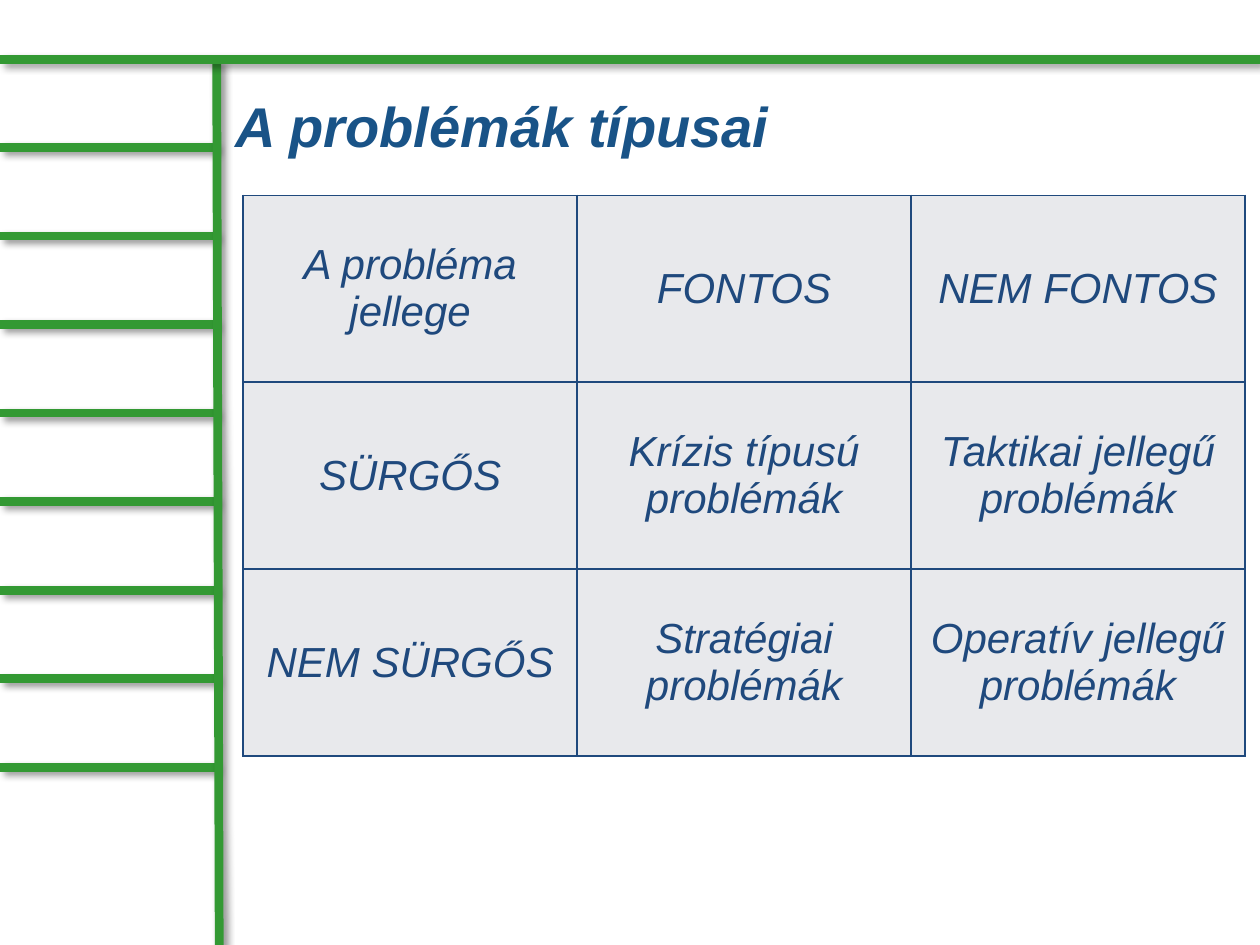
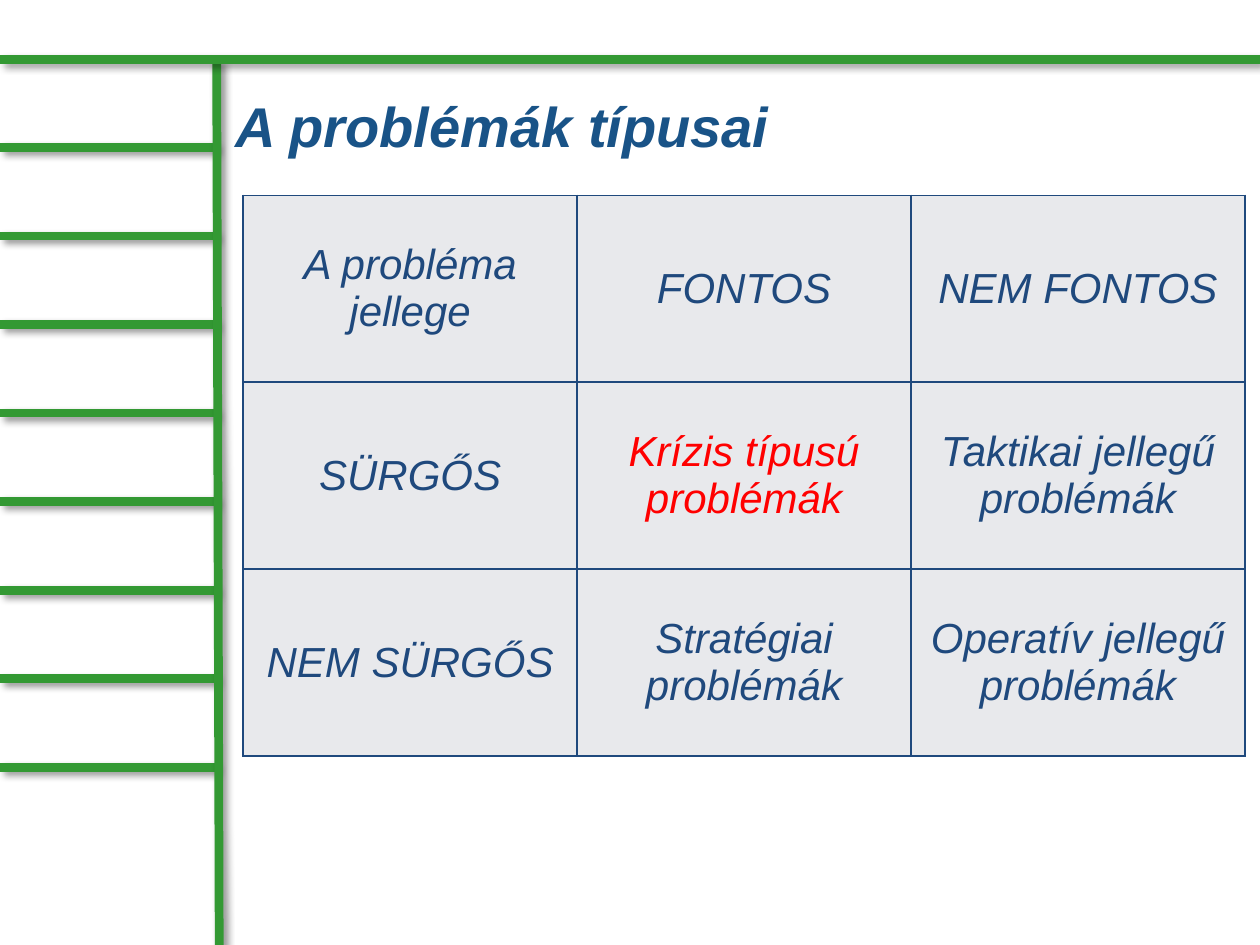
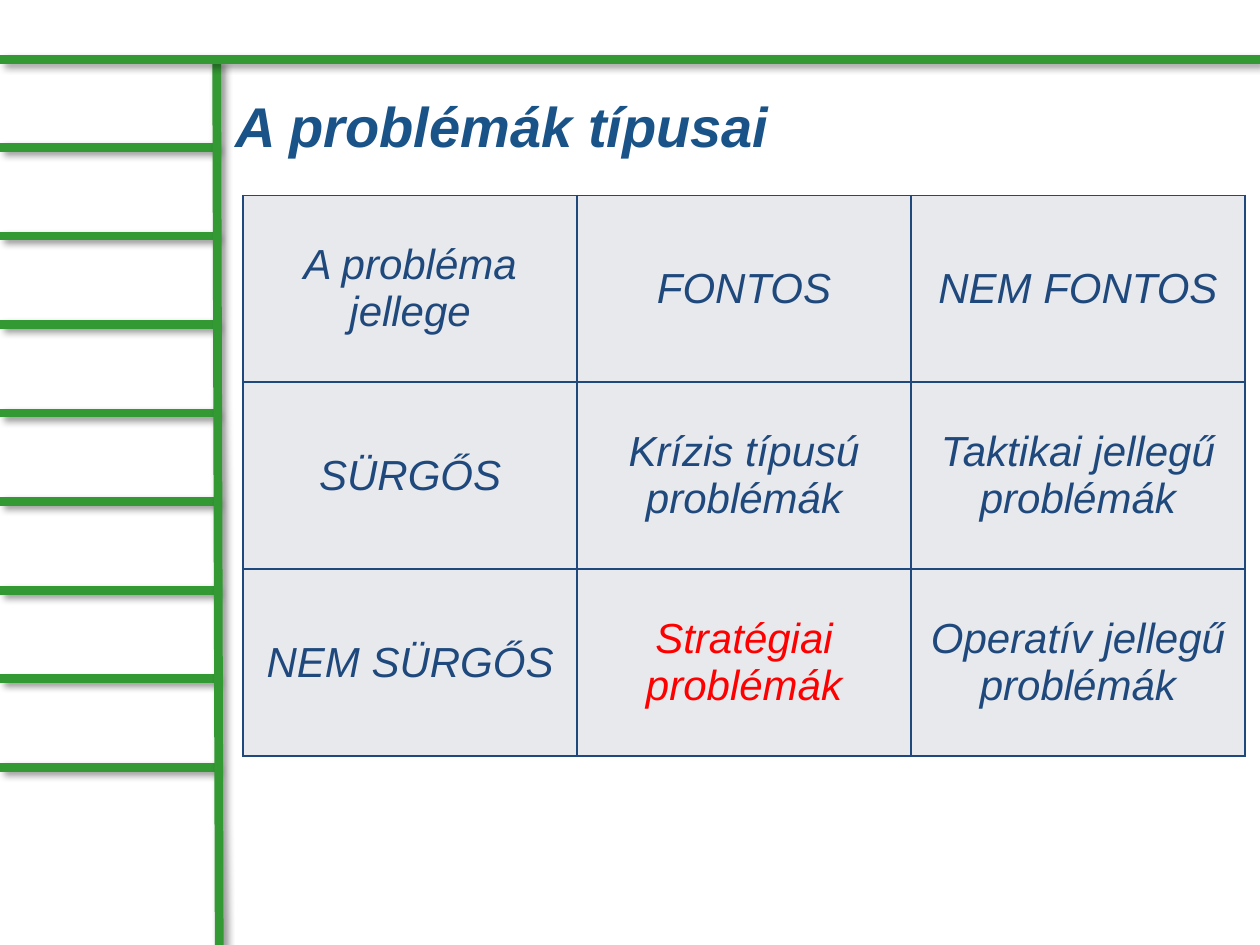
from lxml import etree
from pptx import Presentation
from pptx.dml.color import RGBColor
from pptx.enum.shapes import MSO_CONNECTOR as Connector
from pptx.enum.text import MSO_ANCHOR as Anchor, PP_ALIGN as Align
from pptx.oxml import parse_xml
from pptx.oxml.ns import nsdecls, qn
from pptx.util import Inches, Pt

# Content
TITLE = "A problémák típusai"
MATRIX = [
    ("A probléma jellege", "FONTOS", "NEM FONTOS"),
    ("SÜRGŐS", "Krízis típusú problémák", "Taktikai jellegű problémák"),
    ("NEM SÜRGŐS", "Stratégiai problémák", "Operatív jellegű problémák"),
]
HIGHLIGHTS = [None, "Krízis típusú problémák", "Stratégiai problémák"]

# Shared style
FONT = "Arial"
GREEN = RGBColor(0x33, 0x99, 0x33)
TITLE_BLUE = RGBColor(0x19, 0x53, 0x87)
TABLE_BLUE = RGBColor(0x1F, 0x49, 0x7D)
CELL_GREY = RGBColor(0xE8, 0xE9, 0xEC)
RED = RGBColor(0xFF, 0x00, 0x00)

# Geometry in inches
PAGE_WIDTH, PAGE_HEIGHT = 10, 7.5
TITLE_BOX = (1.77, 0.52, 7.95, 0.94)
TABLE_BOX = (1.93, 1.55, 7.95, 4.45)
BEAM_Y, POST_X = 0.47, 1.72
RUNG_COUNT, FIRST_RUNG, LAST_RUNG = 8, 1.17, 6.09


def shadow_effect(blur, distance, opacity):
    return parse_xml(
        f'<a:effectLst {nsdecls("a")}><a:outerShdw blurRad="{Pt(blur)}" '
        f'dist="{Pt(distance)}" dir="2700000" algn="tl" rotWithShape="0">'
        f'<a:srgbClr val="000000"><a:alpha val="{opacity * 1000}"/></a:srgbClr>'
        '</a:outerShdw></a:effectLst>')


def style_run(span, size, color):
    font = span.font
    font.name, font.size, font.italic = FONT, Pt(size), True
    font.color.rgb = color


def add_ladder(page, layout):
    """Draw the green ladder and move it to the layout that all slides share."""
    step = (LAST_RUNG - FIRST_RUNG) / (RUNG_COUNT - 1)
    rungs = [FIRST_RUNG + step * index for index in range(RUNG_COUNT)]
    bars = [(0, y, POST_X, y) for y in reversed(rungs)]
    bars += [(POST_X, 0.48, POST_X + 0.02, PAGE_HEIGHT),
             (0, BEAM_Y, PAGE_WIDTH, BEAM_Y)]
    for ends in bars:
        bar = page.shapes.add_connector(Connector.STRAIGHT, *map(Inches, ends))
        bar.line.color.rgb = GREEN
        bar.line.width = Pt(5)
        bar.element.spPr.append(shadow_effect(4, 3, 40))
        layout.shapes.element.append(bar.element)


def add_title(page):
    box = page.shapes.title
    box.left, box.top, box.width, box.height = map(Inches, TITLE_BOX)
    frame = box.text_frame
    frame.word_wrap = True
    frame.vertical_anchor = Anchor.MIDDLE
    para = frame.paragraphs[0]
    para.alignment = Align.LEFT
    span = para.add_run()
    span.text = TITLE
    style_run(span, 32, TITLE_BLUE)
    span.font.bold = True
    fill = span.font.fill._xPr.find(qn("a:solidFill"))
    fill.addnext(shadow_effect(3, 3, 40))


def add_borders(cell):
    properties = cell._tc.get_or_add_tcPr()
    for index, side in enumerate(("lnL", "lnR", "lnT", "lnB")):
        line = etree.Element(qn(f"a:{side}"), w=str(Pt(1)))
        fill = etree.SubElement(line, qn("a:solidFill"))
        etree.SubElement(fill, qn("a:srgbClr"), val=str(TABLE_BLUE))
        properties.insert(index, line)


def add_matrix(page, highlight):
    table = page.shapes.add_table(
        len(MATRIX), len(MATRIX[0]), *map(Inches, TABLE_BOX)).table
    table.first_row = table.horz_banding = False
    for row, labels in enumerate(MATRIX):
        for column, label in enumerate(labels):
            cell = table.cell(row, column)
            cell.fill.solid()
            cell.fill.fore_color.rgb = CELL_GREY
            cell.vertical_anchor = Anchor.MIDDLE
            add_borders(cell)
            para = cell.text_frame.paragraphs[0]
            para.alignment = Align.CENTER
            span = para.add_run()
            span.text = label
            style_run(span, 24, RED if label == highlight else TABLE_BLUE)


def main():
    deck = Presentation()
    deck.slide_width, deck.slide_height = Inches(PAGE_WIDTH), Inches(PAGE_HEIGHT)
    layout = deck.slide_layouts.get_by_name("Title Only")
    for highlight in HIGHLIGHTS:
        page = deck.slides.add_slide(layout)
        add_title(page)
        add_matrix(page, highlight)
    add_ladder(deck.slides[0], layout)
    deck.save("out.pptx")


if __name__ == "__main__":
    main()
